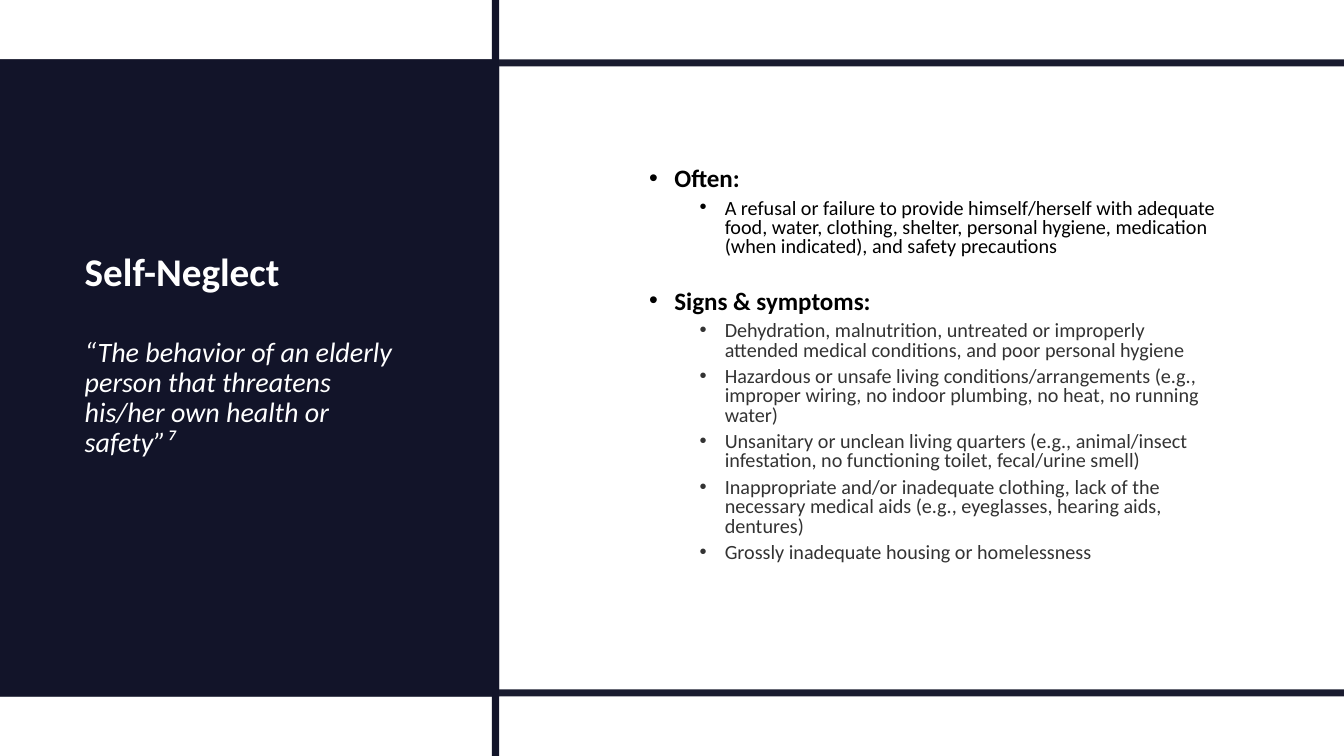
from lxml.etree import SubElement
from pptx import Presentation
from pptx.dml.color import RGBColor
from pptx.enum.shapes import MSO_SHAPE
from pptx.enum.text import MSO_ANCHOR, MSO_AUTO_SIZE, PP_ALIGN
from pptx.oxml.ns import qn
from pptx.util import Inches, Pt

NAVY, WHITE, BLACK, GREY = "121429", "FFFFFF", "000000", "333333"
BAR = 0.07
SIGNS = [
    "Dehydration, malnutrition, untreated or improperly attended medical "
    "conditions, and poor personal hygiene",
    "Hazardous or unsafe living conditions/arrangements (e.g., improper "
    "wiring, no indoor plumbing, no heat, no running water)",
    "Unsanitary or unclean living quarters (e.g., animal/insect infestation, "
    "no functioning toilet, fecal/urine smell)",
    "Inappropriate and/or inadequate clothing, lack of the necessary medical "
    "aids (e.g., eyeglasses, hearing aids, dentures)",
    "Grossly inadequate housing or homelessness",
]


def paint(target, color):
    """Set a fill or a font to a solid hex colour."""
    if hasattr(target, "solid"):
        target.solid()
        target.fore_color.rgb = RGBColor.from_string(color)
    else:
        target.color.rgb = RGBColor.from_string(color)


def add_rect(slide, x, y, w, h, alpha=None):
    rect = slide.shapes.add_shape(
        MSO_SHAPE.RECTANGLE, Inches(x), Inches(y), Inches(w), Inches(h))
    rect.shadow.inherit = False
    rect.line.fill.background()
    paint(rect.fill, NAVY)
    if alpha:
        clr = rect.fill._xPr.find(".//" + qn("a:srgbClr"))
        SubElement(clr, qn("a:alpha")).set("val", str(alpha * 1000))


def set_frame(shape, x, y, w, h, bottom):
    """Place a text shape and centre its text above the bottom inset."""
    shape.left, shape.top = Inches(x), Inches(y)
    shape.width, shape.height = Inches(w), Inches(h)
    frame = shape.text_frame
    frame.word_wrap = True
    frame.auto_size = MSO_AUTO_SIZE.NONE
    frame.vertical_anchor = MSO_ANCHOR.MIDDLE
    frame.margin_bottom = Inches(bottom)
    return frame


def add_text(frame, text, size, color, bold=False, italic=False,
             lines=0.9, before=0, level=0, indent=None):
    """Add a paragraph, with a bullet when an indent is given."""
    par = frame.paragraphs[0]
    if par.runs:
        par = frame.add_paragraph()
    par.alignment = PP_ALIGN.LEFT
    par.level = level
    par.line_spacing = lines
    par.space_before = Pt(before)
    run = par.add_run()
    run.text = text
    font = run.font
    font.name, font.size = "Calibri", Pt(size)
    font.bold, font.italic = bold, italic
    paint(font, color)
    if indent:
        props = par._p.get_or_add_pPr()
        props.set("marL", str(Inches(indent)))
        props.set("indent", str(Inches(-0.25)))
        SubElement(props, qn("a:buFont")).set("typeface", "Arial")
        SubElement(props, qn("a:buChar")).set("char", "•")


def add_head(frame, text, before=10):
    add_text(frame, text, 17.9, BLACK, bold=True, lines=0.8,
             before=before, indent=0.25)


def add_item(frame, text, color):
    add_text(frame, text, 14.4, color, lines=0.8, before=5,
             level=1, indent=0.75)


def main():
    deck = Presentation()
    deck.slide_width, deck.slide_height = Inches(13.33), Inches(7.5)
    slide = deck.slides.add_slide(deck.slide_layouts[5])
    paint(slide.background.fill, WHITE)

    add_rect(slide, 0, 0.59, 4.95, 6.32)
    for top in (0.59, 6.84):
        add_rect(slide, 0, top, 13.33, BAR, alpha=97)
    add_rect(slide, 4.88, 0, BAR, 7.5)

    title = slide.shapes.title
    slide.shapes._spTree.append(title._element)
    frame = set_frame(title, 0.74, 1.59, 3.39, 4.31, bottom=0.48)
    add_text(frame, "Self-Neglect", 28, WHITE, bold=True)
    add_text(frame, "“The behavior of an elderly person that threatens "
             "his/her own health or safety”⁷", 20, WHITE, italic=True,
             before=30.7)

    body = slide.shapes.add_textbox(0, 0, 0, 0)
    frame = set_frame(body, 6.34, 1.59, 5.84, 4.31, bottom=0.28)
    add_head(frame, "Often:")
    add_item(frame, "A refusal or failure to provide himself/herself with "
             "adequate food, water, clothing, shelter, personal hygiene, "
             "medication (when indicated), and safety precautions", BLACK)
    add_head(frame, "Signs & symptoms:", before=24)
    for sign in SIGNS:
        add_item(frame, sign, GREY)

    deck.save("out.pptx")


if __name__ == "__main__":
    main()
